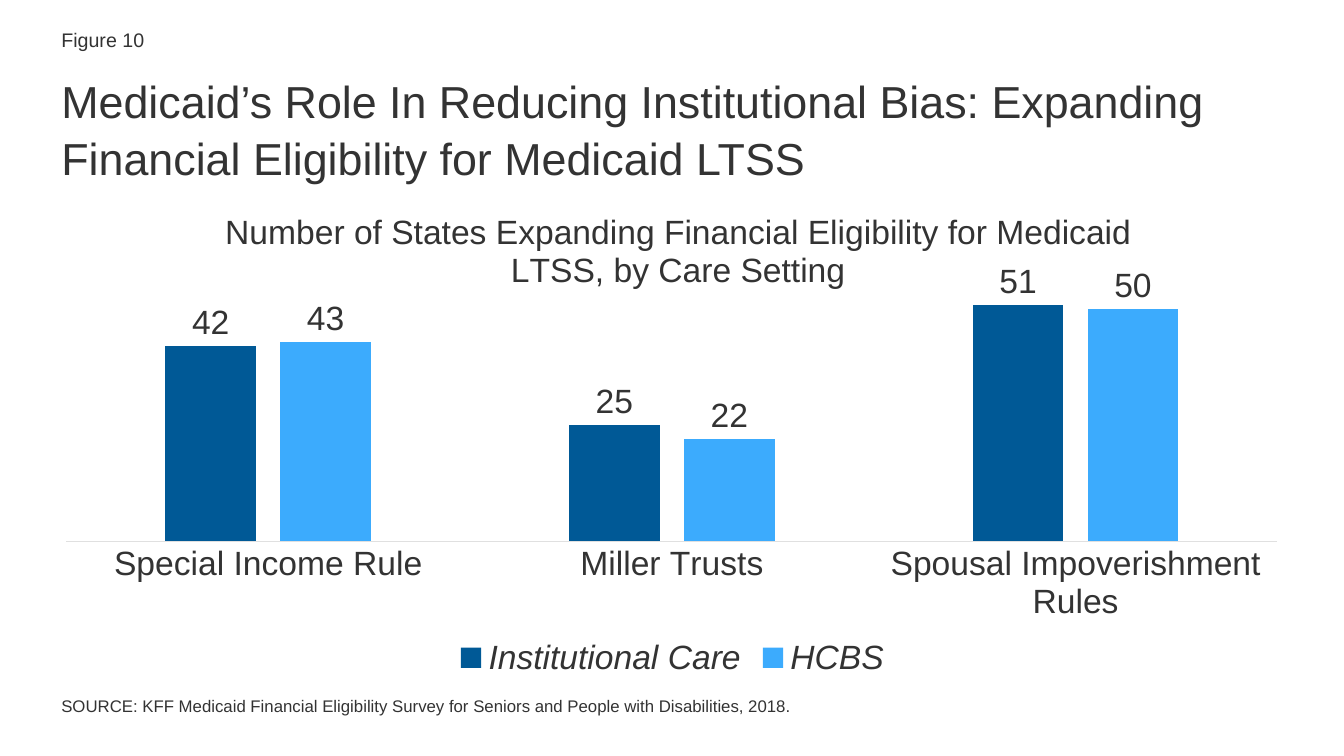
from lxml import etree
from pptx import Presentation
from pptx.chart.data import CategoryChartData
from pptx.dml.color import RGBColor
from pptx.enum import chart as xl, text
from pptx.oxml import parse_xml
from pptx.oxml.ns import nsdecls, qn
from pptx.util import Inches, Pt

INK = RGBColor(0x33, 0x33, 0x33)
AXIS = RGBColor(0xE0, 0xE0, 0xE0)
WHITE = RGBColor(0xFF, 0xFF, 0xFF)
NAVY = RGBColor(0x00, 0x59, 0x96)
SKY = RGBColor(0x3C, 0xAB, 0xFD)
FONT = "Arial"
LEFT, WIDTH = 0.51, 12.32

TEXTS = [
    ("Figure 10", 0.22, 5.15, 0.35, 14, text.MSO_ANCHOR.MIDDLE, 1),
    ("Medicaid’s Role In Reducing Institutional Bias: Expanding "
     "Financial Eligibility for Medicaid LTSS",
     0.66, WIDTH, 0.94, 32, text.MSO_ANCHOR.TOP, 1.05),
    ("SOURCE: KFF Medicaid Financial Eligibility Survey for Seniors and "
     "People with Disabilities, 2018.",
     6.85, 11.2, 0.6, 12, text.MSO_ANCHOR.TOP, 1),
]
CHART_TITLE = ("Number of States Expanding Financial Eligibility for Medicaid "
               "LTSS, by Care Setting")
CATEGORIES = ["Special Income Rule", "Miller Trusts",
              "Spousal Impoverishment Rules"]
SERIES = [
    ("Institutional Care", (42, 25, 51), NAVY),
    ("HCBS", (43, 22, 50), SKY),
]
PLOT_LAYOUT = {"layoutTarget": "inner", "xMode": "edge", "yMode": "edge",
               "x": 0.012, "y": 0.162, "w": 0.975, "h": 0.555}
TITLE_LAYOUT = {"xMode": "edge", "yMode": "edge", "x": 0.135, "y": 0.045}


def style(font, size):
    font.name = FONT
    font.size = Pt(size)
    font.color.rgb = INK


def add_text(s, words, top, width, height, size, anchor, spacing):
    sp = s.shapes.add_textbox(Inches(LEFT), Inches(top),
                              Inches(width), Inches(height))
    tf = sp.text_frame
    tf.word_wrap = True
    tf.vertical_anchor = anchor
    tf.text = words
    p = tf.paragraphs[0]
    p.line_spacing = spacing
    style(p.runs[0].font, size)


def set_layout(element, values, after=None):
    for old in element.findall(qn("c:layout")):
        element.remove(old)
    layout = parse_xml(f"<c:layout {nsdecls('c')}/>")
    manual = etree.SubElement(layout, qn("c:manualLayout"))
    for name, value in values.items():
        etree.SubElement(manual, qn(f"c:{name}")).set("val", str(value))
    if after is None:
        element.insert(0, layout)
    else:
        after.addnext(layout)


def add_eligibility_chart(s):
    data = CategoryChartData()
    data.categories = CATEGORIES
    for name, values, _ in SERIES:
        data.add_series(name, values)
    ch = s.shapes.add_chart(
        xl.XL_CHART_TYPE.COLUMN_CLUSTERED, Inches(LEFT), Inches(1.8),
        Inches(WIDTH), Inches(4.98), data).chart
    style(ch.font, 10)

    ch.has_title = True
    tf = ch.chart_title.text_frame
    tf.text = CHART_TITLE
    r = tf.paragraphs[0].runs[0]
    style(r.font, 24)
    r.font.bold = False
    title = ch.chart_title._element
    set_layout(title, TITLE_LAYOUT, title.find(qn("c:tx")))

    ch.has_legend = True
    ch.legend.position = xl.XL_LEGEND_POSITION.BOTTOM
    ch.legend.include_in_layout = False
    style(ch.legend.font, 24)
    ch.legend.font.italic = True

    cat = ch.category_axis
    cat.major_tick_mark = xl.XL_TICK_MARK.NONE
    cat.format.line.color.rgb = AXIS
    cat.format.line.width = Pt(0.75)
    style(cat.tick_labels.font, 24)
    val = ch.value_axis
    val.visible = False
    val.has_major_gridlines = False
    val.minimum_scale, val.maximum_scale = 0, 60

    plot = ch.plots[0]
    plot.gap_width, plot.overlap = 219, -27
    plot.vary_by_categories = False
    for series, (_, _, color) in zip(plot.series, SERIES):
        series.format.fill.solid()
        series.format.fill.fore_color.rgb = color
        labels = series.data_labels
        labels.show_value = True
        labels.position = xl.XL_LABEL_POSITION.OUTSIDE_END
        style(labels.font, 24)
    set_layout(ch._chartSpace.chart.plotArea, PLOT_LAYOUT)


def main():
    prs = Presentation()
    prs.slide_width, prs.slide_height = Inches(13.33), Inches(7.5)
    s = prs.slides.add_slide(prs.slide_layouts[6])
    s.background.fill.solid()
    s.background.fill.fore_color.rgb = WHITE
    add_eligibility_chart(s)
    for item in TEXTS:
        add_text(s, *item)
    prs.save("out.pptx")


if __name__ == "__main__":
    main()
